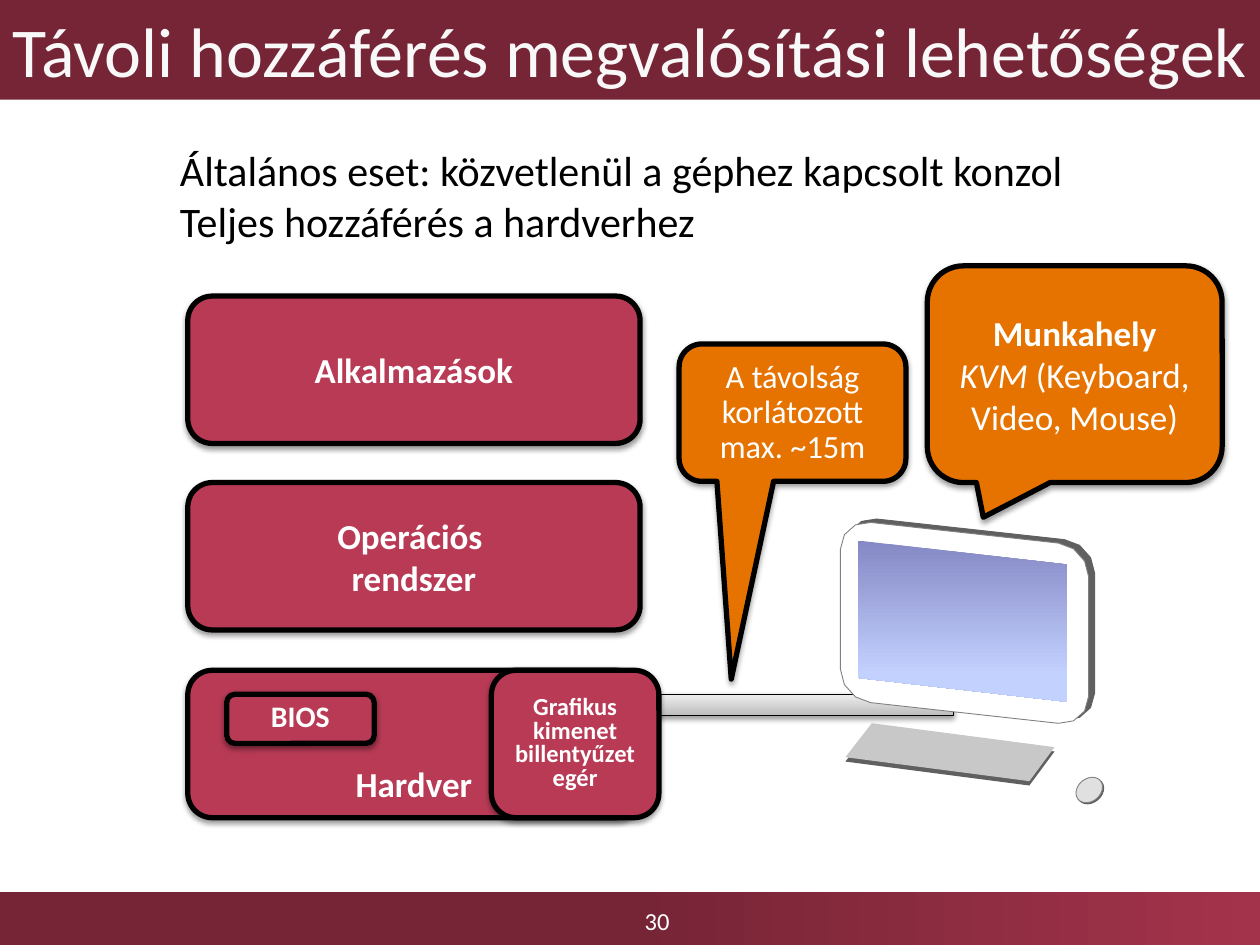
"""Build the slide on direct console access to a machine."""
import math

from lxml import etree
from pptx import Presentation
from pptx import util as u
from pptx.dml.color import RGBColor
from pptx.enum import shapes, text
from pptx.oxml.ns import qn

COLORS = {
    "wine": "762536", "wine_light": "A3334B", "rose": "B83A55", "orange": "E67300",
    "white": "FFFFFF", "title": "F8F8F8", "black": "000000",
    "cable_dark": "BDBDBD", "cable_light": "EEEEEE",
    "edge": "606060", "case": "808080", "keyboard": "C8C8C8", "mouse": "E0E0E0",
    "screen_top": "8488C4", "screen_bottom": "C3D1FF",
}
FONT = "Calibri"
KIND = shapes.MSO_SHAPE
ANCHOR = text.MSO_ANCHOR
SOFT = ("black", 3.1, 1.6, 90, 38)


def paint(shape, stops, line=0, line_color="black", shadow=None, angle=0):
    """Fill with one colour or a gradient, then set the outline and shadow."""
    if len(stops) == 1:
        shape.fill.solid()
        shape.fill.fore_color.rgb = RGBColor.from_string(COLORS[stops[0][1]])
    else:
        shape.fill.gradient()
        shape.fill.gradient_angle = angle
        for stop, (position, color) in zip(shape.fill.gradient_stops, stops):
            stop.position = position
            stop.color.rgb = RGBColor.from_string(COLORS[color])
    if line:
        shape.line.color.rgb = RGBColor.from_string(COLORS[line_color])
        shape.line.width = u.Pt(line)
    else:
        shape.line.fill.background()
    shape.shadow.inherit = False
    if shadow:
        color, blur, distance, direction, opacity = shadow
        effects = shape._element.spPr.find(qn("a:effectLst"))
        outer = etree.SubElement(effects, qn("a:outerShdw"), blurRad=str(u.Pt(blur)),
                                 dist=str(u.Pt(distance)), dir=str(direction * 60000),
                                 rotWithShape="0")
        tint = etree.SubElement(outer, qn("a:srgbClr"), val=COLORS[color])
        etree.SubElement(tint, qn("a:alpha"), val=str(opacity * 1000))


def write(shape, lines, size, color="white", bold=None, spacing=None,
          anchor=ANCHOR.MIDDLE, align=text.PP_ALIGN.CENTER, wrap=True):
    """Put one paragraph per line into the shape."""
    frame = shape.text_frame
    frame.word_wrap = wrap
    frame.vertical_anchor = anchor
    frame.text = "\n".join(lines)
    for paragraph in frame.paragraphs:
        paragraph.alignment = align
        paragraph.line_spacing = spacing
        paragraph.font.name = FONT
        paragraph.font.size = u.Pt(size)
        paragraph.font.bold = bold
        paragraph.font.color.rgb = RGBColor.from_string(COLORS[color])


presentation = Presentation()
presentation.slide_width = u.Inches(10)
presentation.slide_height = u.Inches(7.5)
slide = presentation.slides.add_slide(presentation.slide_layouts[5])

title = slide.shapes.title
title.left, title.top, title.width, title.height = map(u.Inches, (0, 0, 10, 0.79))
title.fill.solid()
title.fill.fore_color.rgb = RGBColor.from_string(COLORS["wine"])
write(title, ["Távoli hozzáférés megvalósítási lehetőségek"], 40, "title")
title.text_frame.margin_left = title.text_frame.margin_right = 0

footer = slide.shapes.add_shape(KIND.RECTANGLE, *map(u.Inches, (0, 7.08, 10, 0.42)))
paint(footer, [(0.5, "wine"), (1, "wine_light")])
number = slide.shapes.add_textbox(*map(u.Inches, (3.59, 7.11, 3.25, 0.39)))
write(number, ["30"], 14)

cable = slide.shapes.add_shape(KIND.RECTANGLE, *map(u.Inches, (5.23, 5.51, 2.34, 0.17)))
paint(cable, [(0, "cable_dark"), (1, "cable_light")], line=0.75, shadow=SOFT, angle=90)

boxes = [
    ((1.49, 5.32, 3.59, 1.17), ["Hardver"], 20, None, ANCHOR.BOTTOM),
    ((1.8, 5.51, 1.17, 0.39), ["BIOS"], 17, 0.8, ANCHOR.MIDDLE),
    ((1.49, 3.83, 3.59, 1.17), ["Operációs \vrendszer"], 20, None, ANCHOR.MIDDLE),
    ((1.49, 2.35, 3.59, 1.17), ["Alkalmazások"], 20, None, ANCHOR.MIDDLE),
    ((3.9, 5.32, 1.33, 1.17), ["Grafikus kimenet billentyűzet", "egér"], 14, 0.8,
     ANCHOR.MIDDLE),
]
for place, lines, size, spacing, anchor in boxes:
    box = slide.shapes.add_shape(KIND.ROUNDED_RECTANGLE, *map(u.Inches, place))
    paint(box, [(0, "rose")], line=3, shadow=SOFT)
    write(box, lines, size, bold=True, spacing=spacing, anchor=anchor)

left, top, right, bottom, radius = 6.67, 4.12, 8.64, 5.55, 0.24
centres = [(right - radius, bottom - radius), (left + radius, bottom - radius),
           (left + radius, top + radius), (right - radius, top + radius)]
case = []
for quarter, (x, y) in enumerate(centres):
    for step in range(4):
        turn = math.radians(90 * quarter + 30 * step)
        edge = x + radius * math.cos(turn)
        case.append((edge, y + radius * math.sin(turn) + 0.11 * (edge - left)))
screen = [(6.81, 4.29), (8.47, 4.48), (8.47, 5.57), (6.81, 5.38)]
keyboard = [(6.92, 5.74), (8.37, 5.93), (8.17, 6.2), (6.71, 6.01)]
outlines = [
    (case, [(0, "white")], 0.5, ("edge", 0, 4, 330, 100)),
    (screen, [(0, "screen_top"), (0.83, "screen_bottom")], 0, None),
    (keyboard, [(0, "keyboard")], 0, ("edge", 0, 2.5, 90, 100)),
]
for points, stops, line, depth in outlines:
    start, *rest = [(u.Inches(x), u.Inches(y)) for x, y in points]
    builder = slide.shapes.build_freeform(*start)
    builder.add_line_segments(rest)
    paint(builder.convert_to_shape(), stops, line, "case", depth, 270)

mouse = slide.shapes.add_shape(KIND.OVAL, *map(u.Inches, (8.53, 6.18, 0.23, 0.18)))
mouse.rotation = -40
paint(mouse, [(0, "mouse")], 0.5, "case", ("edge", 0, 1, 45, 100))

callouts = [
    ((7.36, 2.11, 2.34, 1.72), (-0.31, 0.66), ["Munkahely", ""], 20, None),
    ((5.39, 2.73, 1.8, 1.09), (-0.27, 1.94), ["A távolság korlátozott", "max. ~15m"], 18.5, 0.9),
]
for place, tip, lines, size, spacing in callouts:
    callout = slide.shapes.add_shape(KIND.ROUNDED_RECTANGULAR_CALLOUT, *map(u.Inches, place))
    callout.adjustments[0], callout.adjustments[1] = tip
    paint(callout, [(0, "orange")], line=3, shadow=SOFT)
    write(callout, lines, size, spacing=spacing)
    if lines[0] == "Munkahely":
        heading, detail = callout.text_frame.paragraphs
        heading.font.bold = True
        for words, italic in (("KVM ", True), ("(Keyboard, Video, Mouse)", False)):
            run = detail.add_run()
            run.text = words
            run.font.italic = italic

summary = slide.shapes.add_textbox(*map(u.Inches, (1.33, 1.1, 7.42, 1)))
write(summary, ["Általános eset: közvetlenül a géphez kapcsolt konzol", "Teljes hozzáférés a hardverhez"],
      24, "black", anchor=ANCHOR.TOP, align=text.PP_ALIGN.LEFT, wrap=False)

presentation.save("out.pptx")
